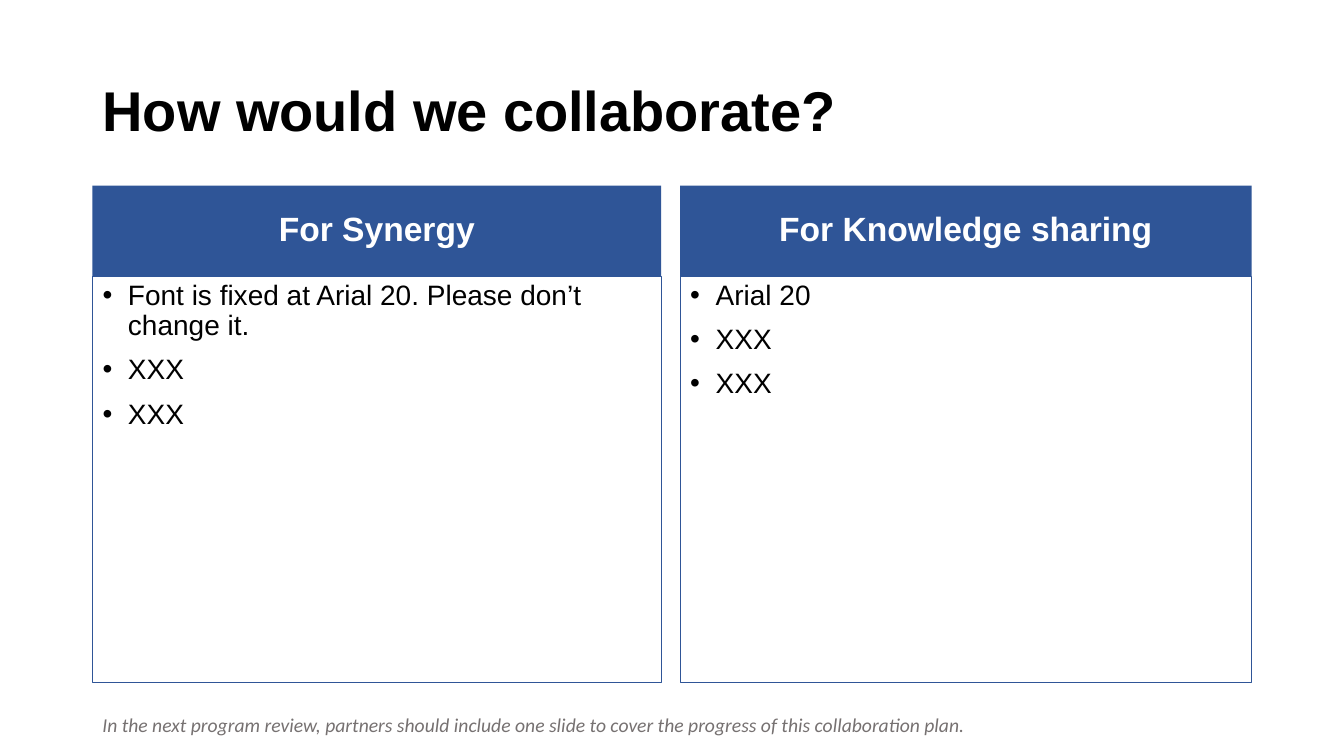
from pptx import Presentation
from pptx.dml.color import RGBColor
from pptx.enum.text import MSO_ANCHOR as Anchor, MSO_AUTO_SIZE as AutoSize, PP_ALIGN as Align
from pptx.util import Cm, Pt

COLORS = {"blue": "2F5597", "black": "000000", "white": "FFFFFF", "gray": "767171"}
LEFT, TOP, HEADER_H, PANEL_H = 2.33, 4.68, 2.28, 12.52
PANELS = [
    (LEFT, 14.33, "For Synergy",
     ["Font is fixed at Arial 20. Please don’t change it.", "XXX", "XXX"]),
    (17.14, 14.4, "For Knowledge sharing", ["Arial 20", "XXX", "XXX"]),
]


def rgb(name):
    """Return the named colour."""
    return RGBColor.from_string(COLORS[name])


def place(sp, x, y, w, h):
    """Move and size a shape, in centimetres."""
    sp.left, sp.top, sp.width, sp.height = Cm(x), Cm(y), Cm(w), Cm(h)


def write(sp, lines, size, color, font="Arial", bold=False, italic=False,
          align=Align.LEFT, anchor=Anchor.TOP, spacing=0.9, before=0):
    """Fill a shape with evenly formatted paragraphs."""
    tf = sp.text_frame
    tf.text = "\n".join(lines)
    tf.word_wrap = True
    tf.auto_size = AutoSize.NONE
    tf.vertical_anchor = anchor
    for p in tf.paragraphs:
        p.alignment = align
        p.line_spacing = spacing
        p.space_before = Pt(before)
        p.font.name, p.font.size = font, Pt(size)
        p.font.bold, p.font.italic = bold, italic
        p.font.color.rgb = rgb(color)


def add_title(s, x, y, w, h):
    """Place the slide title."""
    sp = s.shapes.title
    place(sp, x, y, w, h)
    write(sp, ["How would we collaborate?"], 40, "black", bold=True, anchor=Anchor.MIDDLE)


def add_panel(header, body, x, y, w, h, heading, items):
    """Place a filled header above an outlined bullet list."""
    place(header, x, y, w, HEADER_H)
    header.fill.solid()
    header.fill.fore_color.rgb = rgb("blue")
    write(header, [heading], 24, "white", bold=True, align=Align.CENTER,
          anchor=Anchor.MIDDLE, before=10)

    place(body, x, y + HEADER_H, w, h - HEADER_H)
    body.line.color.rgb = rgb("blue")
    body.line.width = Pt(0.75)
    write(body, items, 20, "black", before=10)
    indent = Cm(0.64)
    for p in body.text_frame.paragraphs:
        pPr = p._p.get_or_add_pPr()
        pPr.set("marL", str(indent))
        pPr.set("indent", str(-indent))


def add_footnote(s, x, y, w, h):
    """Place the reminder below the panels."""
    sp = s.shapes.add_textbox(Cm(x), Cm(y), Cm(w), Cm(h))
    write(sp, ["In the next program review, partners should include one slide "
               "to cover the progress of this collaboration plan."],
          14, "gray", font="Calibri", italic=True, spacing=1.0)


def main():
    """Build and save the collaboration slide."""
    prs = Presentation()
    prs.slide_width, prs.slide_height = Cm(33.87), Cm(19.05)
    s = prs.slides.add_slide(prs.slide_layouts.get_by_name("Comparison"))
    add_title(s, LEFT, 1.02, 29.21, 3.68)
    _, *bodies = s.placeholders
    for header, body, (x, w, heading, items) in zip(bodies[::2], bodies[1::2], PANELS):
        add_panel(header, body, x, TOP, w, PANEL_H, heading, items)
    add_footnote(s, LEFT, 17.83, 30.89, 0.86)
    prs.save("out.pptx")


if __name__ == "__main__":
    main()
